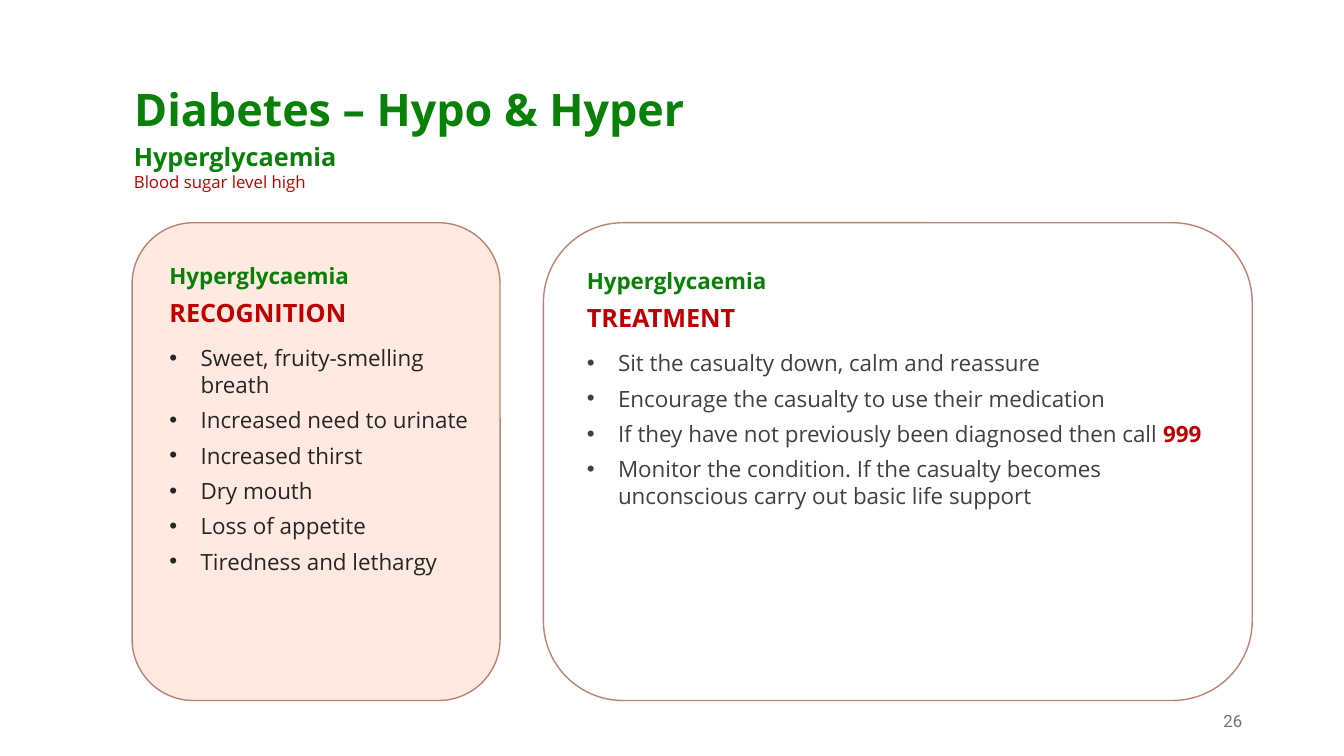
import lxml.etree
import pptx
import pptx.dml.color
import pptx.enum.shapes
import pptx.enum.text
import pptx.oxml.ns
import pptx.util

Inches = pptx.util.Inches
Pt = pptx.util.Pt
ALIGN = pptx.enum.text.PP_ALIGN
ANCHOR = pptx.enum.text.MSO_ANCHOR

COLORS = {
    "green": "098109", "red": "C00000", "dark": "262626", "charcoal": "404040",
    "gray": "767171", "peach": "FFE9E0", "white": "FFFFFF", "outline": "BD8274",
}

# Character formats: font attributes plus a colour name
FORMATS = {
    "title": {"size": Pt(32), "bold": True, "color": "green"},
    "subtitle": {"size": Pt(18), "bold": True, "color": "green"},
    "caption": {"size": Pt(12), "bold": False, "color": "red"},
    "topic": {"size": Pt(16), "bold": True, "color": "green"},
    "heading": {"size": Pt(18), "bold": True, "color": "red"},
    "dark": {"size": Pt(16), "bold": False, "color": "dark"},
    "charcoal": {"size": Pt(16), "bold": False, "color": "charcoal"},
    "alert": {"size": Pt(16), "bold": True, "color": "red"},
    "number": {"size": Pt(12), "bold": False, "color": "gray", "name": "Roboto"},
}


class SlideBuilder:
    """Holds the style and the current slide."""

    font_name = "Open Sans"
    bullet_indent = Inches(0.31)

    def __init__(self, presentation, layout_index):
        layout = presentation.slide_layouts[layout_index]
        self.slide = presentation.slides.add_slide(layout)

    def place(self, shape, box):
        for name, value in zip(("left", "top", "width", "height"), box):
            setattr(shape, name, Inches(value))

    def prepare_frame(self, shape, anchor=ANCHOR.TOP):
        frame = shape.text_frame
        settings = {"word_wrap": True, "vertical_anchor": anchor,
                    "auto_size": pptx.enum.text.MSO_AUTO_SIZE.NONE}
        for name, value in settings.items():
            setattr(frame, name, value)
        return frame

    def set_bullet(self, paragraph, bulleted):
        properties = paragraph._p.get_or_add_pPr()
        indent = self.bullet_indent if bulleted else 0
        properties.set("marL", str(indent))
        properties.set("indent", str(-indent))
        qualify = pptx.oxml.ns.qn
        if bulleted:
            lxml.etree.SubElement(properties, qualify("a:buFont"), typeface="Arial")
            lxml.etree.SubElement(properties, qualify("a:buChar"), char="•")
        else:
            lxml.etree.SubElement(properties, qualify("a:buNone"))

    def add_text(self, frame, runs, space_after=0, bulleted=False, alignment=ALIGN.LEFT):
        """Add a paragraph made of (text, format name) runs."""
        paragraph = frame.paragraphs[0]
        if paragraph.runs:
            paragraph = frame.add_paragraph()
        settings = {"alignment": alignment, "space_before": Pt(0),
                    "space_after": Pt(space_after)}
        for name, value in settings.items():
            setattr(paragraph, name, value)
        self.set_bullet(paragraph, bulleted)
        for text, format_name in runs:
            run = paragraph.add_run()
            run.text = text
            values = {"name": self.font_name, **FORMATS[format_name]}
            color = COLORS[values.pop("color")]
            for name, value in values.items():
                setattr(run.font, name, value)
            run.font.color.rgb = pptx.dml.color.RGBColor.from_string(color)

    def title(self, text, box):
        shape = self.slide.shapes.title
        self.place(shape, box)
        self.add_text(self.prepare_frame(shape), [(text, "title")])

    def text_box(self, lines, box, anchor=ANCHOR.TOP, alignment=ALIGN.LEFT):
        shape = self.slide.shapes.add_textbox(*map(Inches, box))
        frame = self.prepare_frame(shape, anchor)
        for line in lines:
            self.add_text(frame, [line], alignment=alignment)

    def card(self, fill, box):
        """Add a rounded panel behind the placeholders."""
        shape = self.slide.shapes.add_shape(
            pptx.enum.shapes.MSO_SHAPE.ROUNDED_RECTANGLE, *map(Inches, box))
        shape.shadow.inherit = False
        shape.fill.solid()
        for target, color in ((shape.fill.fore_color, fill),
                              (shape.line.color, "outline")):
            target.rgb = pptx.dml.color.RGBColor.from_string(COLORS[color])
        shape.line.width = Pt(1)
        self.slide.shapes.element.insert(2, shape.element)

    def card_list(self, placeholder_index, heading, items, box):
        shape = self.slide.placeholders[placeholder_index]
        self.place(shape, box)
        frame = self.prepare_frame(shape)
        self.add_text(frame, [("Hyperglycaemia", "topic")], space_after=6)
        self.add_text(frame, [(heading, "heading")], space_after=12)
        for runs in items:
            self.add_text(frame, runs, space_after=6, bulleted=True)


def main():
    presentation = pptx.Presentation()
    presentation.slide_width = Inches(13.33)
    presentation.slide_height = Inches(7.5)
    builder = SlideBuilder(presentation, layout_index=3)

    # Heading
    builder.title("Diabetes – Hypo & Hyper", (1.23, 0.76, 9.5, 0.64))
    builder.text_box([("Hyperglycaemia", "subtitle"),
                      ("Blood sugar level high", "caption")],
                     (1.23, 1.35, 11.07, 0.61))

    # Recognition card
    symptoms = ["Sweet, fruity-smelling breath", "Increased need to urinate",
                "Increased thirst", "Dry mouth", "Loss of appetite",
                "Tiredness and lethargy"]
    builder.card("peach", (1.31, 2.21, 3.65, 4.74))
    builder.card_list(1, "RECOGNITION", [[(text, "dark")] for text in symptoms],
                      (1.58, 2.55, 3.17, 3.48))

    # Treatment card
    steps = [
        [("Sit the casualty down, calm and reassure", "charcoal")],
        [("Encourage the casualty to use their medication", "charcoal")],
        [("If they have not previously been diagnosed then call ", "charcoal"),
         ("999", "alert")],
        [("Monitor the condition. If the casualty becomes unconscious "
          "carry out basic life support", "charcoal")],
    ]
    builder.card("white", (5.39, 2.21, 7.03, 4.74))
    builder.card_list(2, "TREATMENT", steps, (5.72, 2.6, 6.36, 2.51))

    # Slide number
    builder.text_box([("26", "number")], (9.42, 6.95, 3, 0.4),
                     ANCHOR.MIDDLE, ALIGN.RIGHT)

    presentation.save("out.pptx")


if __name__ == "__main__":
    main()
